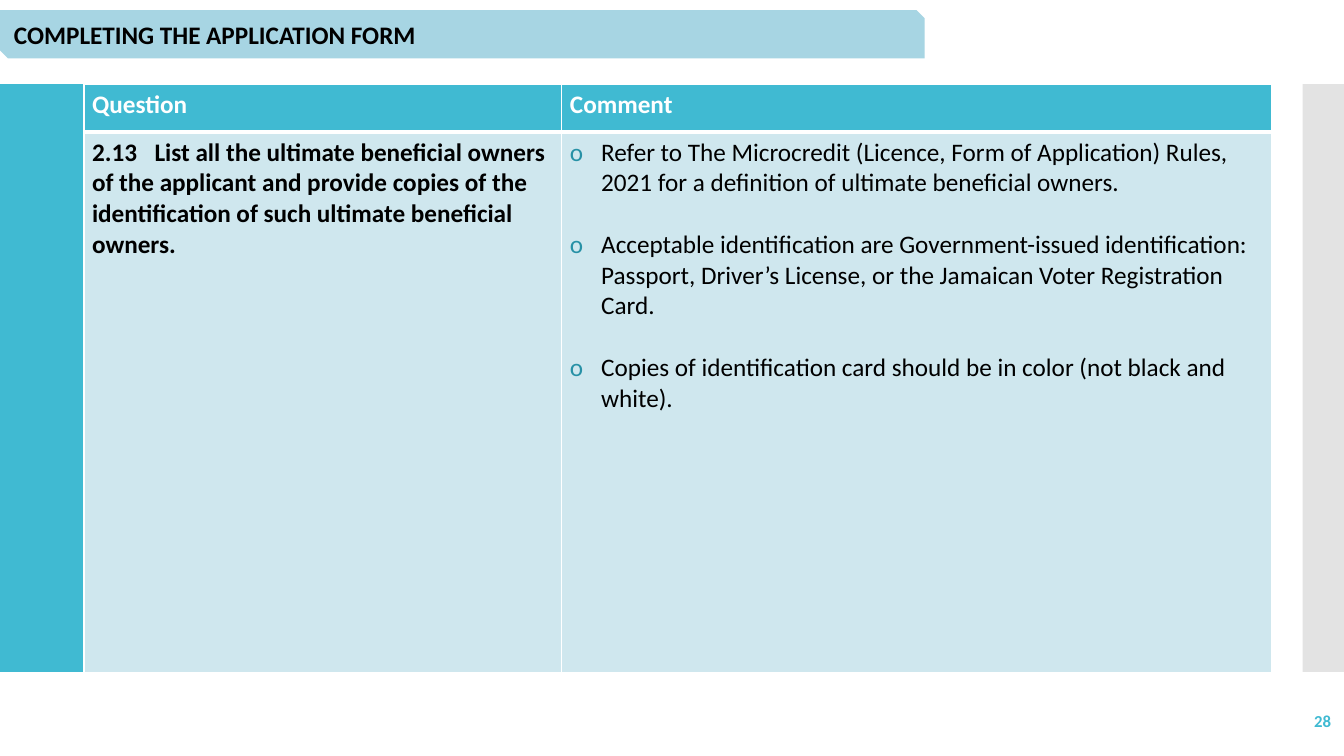
from lxml.etree import SubElement
from pptx import Presentation
from pptx.dml.color import RGBColor
from pptx.enum.shapes import MSO_SHAPE
from pptx.enum.text import MSO_ANCHOR, PP_ALIGN
from pptx.oxml.ns import qn
from pptx.util import Inches, Pt

TITLE = "COMPLETING THE APPLICATION FORM"
PAGE_NUMBER = "28"
HEADERS = ["Question", "Comment"]
QUESTION = (
    "2.13\tList all the ultimate beneficial owners of the applicant and provide "
    "copies of the identification of such ultimate beneficial owners."
)
COMMENTS = [
    "Refer to The Microcredit (Licence, Form of Application) Rules, 2021 for a "
    "definition of ultimate beneficial owners.",
    "Acceptable identification are Government-issued identification: Passport, "
    "Driver’s License, or the Jamaican Voter Registration Card.",
    "Copies of identification card should be in color (not black and white).",
]
COLORS = {
    "teal": "40BAD2", "banner": "A7D5E3", "cell": "CFE7EE", "bullet": "2791A6",
    "grey": "C8C8C8", "white": "FFFFFF", "black": "000000",
}
FONT = "Calibri"
WIDTH, HEIGHT = 13.33, 7.5
BAND_TOP, BAND_HEIGHT = HEIGHT / 9, HEIGHT * 7 / 9
TABLE_LEFT, TABLE_TOP = WIDTH / 16, 0.84
COLUMNS = [4.74, 7.04]
ROWS = [0.47, 5.36]
HANGING = 0.31
TAB_STOP = 0.62
COMMENT_GAP = 22


def color(name):
    return RGBColor.from_string(COLORS[name])


def set_all(target, values):
    for name, value in values.items():
        setattr(target, name, value)


def write(para, text, tint, size=18, bold=True):
    span = para.add_run()
    span.text = text
    set_all(span.font, {"name": FONT, "size": Pt(size), "bold": bold})
    span.font.color.rgb = color(tint)


def add_block(page, kind, left, top, width, height, tint):
    block = page.shapes.add_shape(
        kind, Inches(left), Inches(top), Inches(width), Inches(height))
    block.shadow.inherit = False
    block.fill.solid()
    block.fill.fore_color.rgb = color(tint)
    block.line.fill.background()
    return block


def add_solid(parent, tint):
    fill = SubElement(parent, qn("a:solidFill"))
    return SubElement(fill, qn("a:srgbClr"), val=COLORS[tint])


def style_cell(cell, tint, borders):
    properties = cell._tc.get_or_add_tcPr()
    for side, points in zip("LRTB", borders):
        line = SubElement(properties, qn(f"a:ln{side}"), w=str(Pt(points)))
        add_solid(line, "white")
    cell.fill.solid()
    cell.fill.fore_color.rgb = color(tint)
    set_all(cell, {
        "margin_left": Inches(0.08), "margin_right": Inches(0.08),
        "margin_top": Inches(0.05), "margin_bottom": Inches(0.05),
        "vertical_anchor": MSO_ANCHOR.TOP,
    })


def add_bullet(para):
    properties = para._p.get_or_add_pPr()
    properties.set("marL", str(Inches(HANGING)))
    properties.set("indent", str(-Inches(HANGING)))
    tint = SubElement(properties, qn("a:buClr"))
    SubElement(tint, qn("a:srgbClr"), val=COLORS["bullet"])
    SubElement(properties, qn("a:buFont"), typeface=FONT)
    SubElement(properties, qn("a:buChar"), char="o")


def add_tab(para):
    tabs = SubElement(para._p.get_or_add_pPr(), qn("a:tabLst"))
    SubElement(tabs, qn("a:tab"), pos=str(Inches(TAB_STOP)), algn="l")


def add_bands(page):
    add_block(page, MSO_SHAPE.RECTANGLE, 0, BAND_TOP, 3.77, BAND_HEIGHT, "teal")
    edge = add_block(page, MSO_SHAPE.RECTANGLE, 12.92, BAND_TOP,
                     WIDTH - 12.92, BAND_HEIGHT, "grey")
    tint = edge._element.spPr.find(qn("a:solidFill"))[0]
    SubElement(tint, qn("a:alpha"), val="50000")


def add_question_table(page):
    table = page.shapes.add_table(
        len(ROWS), len(COLUMNS), Inches(TABLE_LEFT), Inches(TABLE_TOP),
        Inches(sum(COLUMNS)), Inches(sum(ROWS))).table
    table.horz_banding = False
    for column, width in zip(table.columns, COLUMNS):
        column.width = Inches(width)
    for row, height in zip(table.rows, ROWS):
        row.height = Inches(height)
    for index, header in enumerate(HEADERS):
        style_cell(table.cell(0, index), "teal", (1, 1, 1, 3))
        style_cell(table.cell(1, index), "cell", (1, 1, 3, 1))
        write(table.cell(0, index).text_frame.paragraphs[0], header, "white")
    question = table.cell(1, 0).text_frame.paragraphs[0]
    add_tab(question)
    write(question, QUESTION, "black")
    frame = table.cell(1, 1).text_frame
    for index, comment in enumerate(COMMENTS):
        para = frame.add_paragraph() if index else frame.paragraphs[0]
        add_bullet(para)
        if index:
            para.space_before = Pt(COMMENT_GAP)
        write(para, comment, "black", bold=False)


def add_page_number(page):
    box = page.shapes.add_textbox(
        Inches(11.63), Inches(6.95), Inches(1.67), Inches(0.4))
    set_all(box.text_frame, {"word_wrap": True, "vertical_anchor": MSO_ANCHOR.MIDDLE})
    para = box.text_frame.paragraphs[0]
    para.alignment = PP_ALIGN.RIGHT
    write(para, PAGE_NUMBER, "teal", size=12)


def add_title(page):
    banner = add_block(page, MSO_SHAPE.SNIP_2_DIAG_RECTANGLE, 0, 0.1, 9.17, 0.48, "banner")
    set_all(banner.text_frame, {"word_wrap": True, "vertical_anchor": MSO_ANCHOR.MIDDLE})
    para = banner.text_frame.paragraphs[0]
    para.alignment = PP_ALIGN.LEFT
    write(para, TITLE, "black")


def main():
    deck = Presentation()
    set_all(deck, {"slide_width": Inches(WIDTH), "slide_height": Inches(HEIGHT)})
    page = deck.slides.add_slide(deck.slide_layouts[6])
    add_bands(page)
    add_question_table(page)
    add_page_number(page)
    add_title(page)
    deck.save("out.pptx")


if __name__ == "__main__":
    main()
